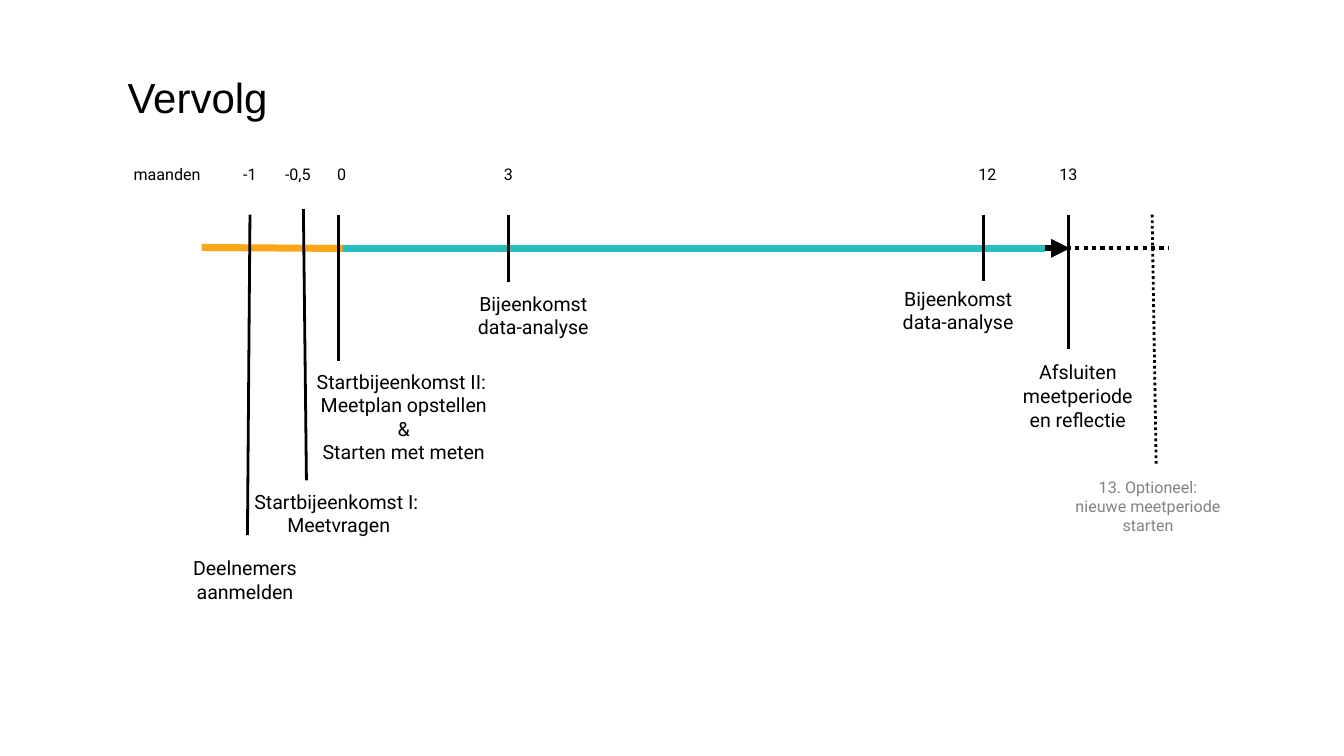
from dataclasses import dataclass
from typing import Optional

from pptx import Presentation
from pptx import util as u
from pptx.dml.color import RGBColor
from pptx.enum import dml, text
from pptx.oxml.ns import qn

COLS, ROWS = 80, 45
WIDTH, HEIGHT = u.Inches(26.67), u.Inches(15)


@dataclass(frozen=True)
class Theme:
    ink: str = "000000"
    muted: str = "818285"
    prepare: str = "FAA61A"
    measure: str = "29BDBE"
    title_font: str = "Arial"
    body_font: str = "Roboto"
    title_size: float = 60
    caption_size: float = 28
    small_size: float = 23


THEME = Theme()


@dataclass(frozen=True)
class Line:
    """A line between two (column, row) points."""
    start: tuple[float, float]
    end: tuple[float, float]
    weight: float = 4
    color: str = THEME.ink
    dotted: bool = False
    arrow: bool = False


@dataclass(frozen=True)
class Label:
    """Centred text in a box of (column, row, columns, rows)."""
    lines: tuple[str, ...]
    box: tuple[float, float, float, float]
    size: float = THEME.caption_size
    color: str = THEME.ink


@dataclass(frozen=True)
class Milestone:
    tick: Line
    caption: Label
    month: Optional[str] = None
    month_center: float = 0


AXIS = 14.78
MONTH_ROW, MONTH_ROWS, MONTH_COLS = 9.52, 1.65, 2.46
TICK_TOP = 12.78
MEETING = ("Bijeenkomst data-analyse",)

AXIS_LINES = [
    Line((12, AXIS), (63.69, AXIS), 9, arrow=True),
    Line((20, AXIS), (62.22, AXIS), 10, THEME.measure),
    Line((12, 14.73), (20.4, 14.79), 10, THEME.prepare),
    Line((63, AXIS), (69.54, AXIS), 6, dotted=True),
]

MILESTONES = [
    Milestone(Line((14.88, TICK_TOP), (14.73, 31.86)),
              Label(("Deelnemers aanmelden",), (10.92, 32.85, 7.32, 3.3)),
              "-1", 14.87),
    Milestone(Line((18.06, 12.45), (18.24, 28.59)),
              Label(("Startbijeenkomst I: ", "Meetvragen"),
                    (12.78, 28.98, 14.76, 3.12)),
              "-0,5", 17.73),
    Milestone(Line((20.16, TICK_TOP), (20.16, 21.48), 4.5),
              Label(("Startbijeenkomst II: ", "Meetplan opstellen", " & ",
                     "Starten met meten"), (16.65, 21.81, 14.76, 5.97)),
              "0", 20.34),
    Milestone(Line((30.27, TICK_TOP), (30.27, 16.8)),
              Label(MEETING, (27, 17.13, 9.48, 3.27)), "3", 30.27),
    Milestone(Line((58.53, TICK_TOP), (58.53, 16.74)),
              Label(MEETING, (52.29, 16.83, 9.48, 3.27)), "12", 58.77),
    Milestone(Line((63.6, TICK_TOP), (63.6, 20.76)),
              Label(("Afsluiten meetperiode en reflectie",),
                    (60.33, 21.21, 7.65, 4.68)), "13", 63.6),
    Milestone(Line((68.58, TICK_TOP), (68.82, 27.63), dotted=True),
              Label(("13. Optioneel: nieuwe meetperiode starten",),
                    (63.6, 28.14, 9.48, 3.96), THEME.small_size, THEME.muted)),
]


def col(n: float) -> int:
    return round(WIDTH * n / COLS)


def row(n: float) -> int:
    return round(HEIGHT * n / ROWS)


def set_attrs(target, values: dict) -> None:
    for name, value in values.items():
        setattr(target, name, value)


def set_font(font, name: str, size: float, color: str) -> None:
    set_attrs(font, {"name": name, "size": u.Pt(size)})
    font.color.rgb = RGBColor.from_string(color)


def draw_line(slide, line: Line) -> None:
    (x1, y1), (x2, y2) = line.start, line.end
    sp = slide.shapes.add_connector(1, col(x1), row(y1), col(x2), row(y2))
    sp.line.width = u.Pt(line.weight)
    sp.line.color.rgb = RGBColor.from_string(line.color)
    if line.dotted:
        sp.line.dash_style = dml.MSO_LINE.ROUND_DOT
    props = sp._element.spPr
    if line.arrow:
        ln = props.find(qn("a:ln"))
        ln.append(ln.makeelement(qn("a:tailEnd"), {"type": "triangle"}))
    props.append(props.makeelement(qn("a:effectLst"), {}))


def draw_label(slide, label: Label) -> None:
    x, y, w, h = label.box
    tf = slide.shapes.add_textbox(col(x), row(y), col(w), row(h)).text_frame
    margins = ("margin_left", "margin_right", "margin_top", "margin_bottom")
    set_attrs(tf, dict.fromkeys(margins, u.Inches(0.08)))
    set_attrs(tf, {"word_wrap": True,
                   "vertical_anchor": text.MSO_ANCHOR.MIDDLE})
    tf.text = "\n".join(label.lines)
    for p in tf.paragraphs:
        p.alignment = text.PP_ALIGN.CENTER
        set_font(p.runs[0].font, THEME.body_font, label.size, label.color)


def draw_month(slide, name: str, center: float,
               width: float = MONTH_COLS) -> None:
    box = (center - width / 2, MONTH_ROW, width, MONTH_ROWS)
    draw_label(slide, Label((name,), box, THEME.small_size))


def draw_title(slide, words: str) -> None:
    sp = slide.shapes.title
    set_attrs(sp, {"left": col(7.29), "top": row(4.08),
                   "width": col(11.94), "height": row(3.33)})
    tf = sp.text_frame
    tf.text = words
    set_attrs(tf, {"word_wrap": True, "vertical_anchor": text.MSO_ANCHOR.TOP})
    p = tf.paragraphs[0]
    p.alignment = text.PP_ALIGN.LEFT
    set_font(p.runs[0].font, THEME.title_font, THEME.title_size, THEME.ink)


def main() -> None:
    prs = Presentation()
    set_attrs(prs, {"slide_width": WIDTH, "slide_height": HEIGHT})
    slide = prs.slides.add_slide(prs.slide_layouts.get_by_name("Title Only"))
    draw_title(slide, "Vervolg")
    for line in AXIS_LINES:
        draw_line(slide, line)
    draw_month(slide, "maanden", 9.95, 6.87)
    for m in MILESTONES:
        draw_line(slide, m.tick)
        draw_label(slide, m.caption)
        if m.month:
            draw_month(slide, m.month, m.month_center)
    prs.save("out.pptx")


if __name__ == "__main__":
    main()
